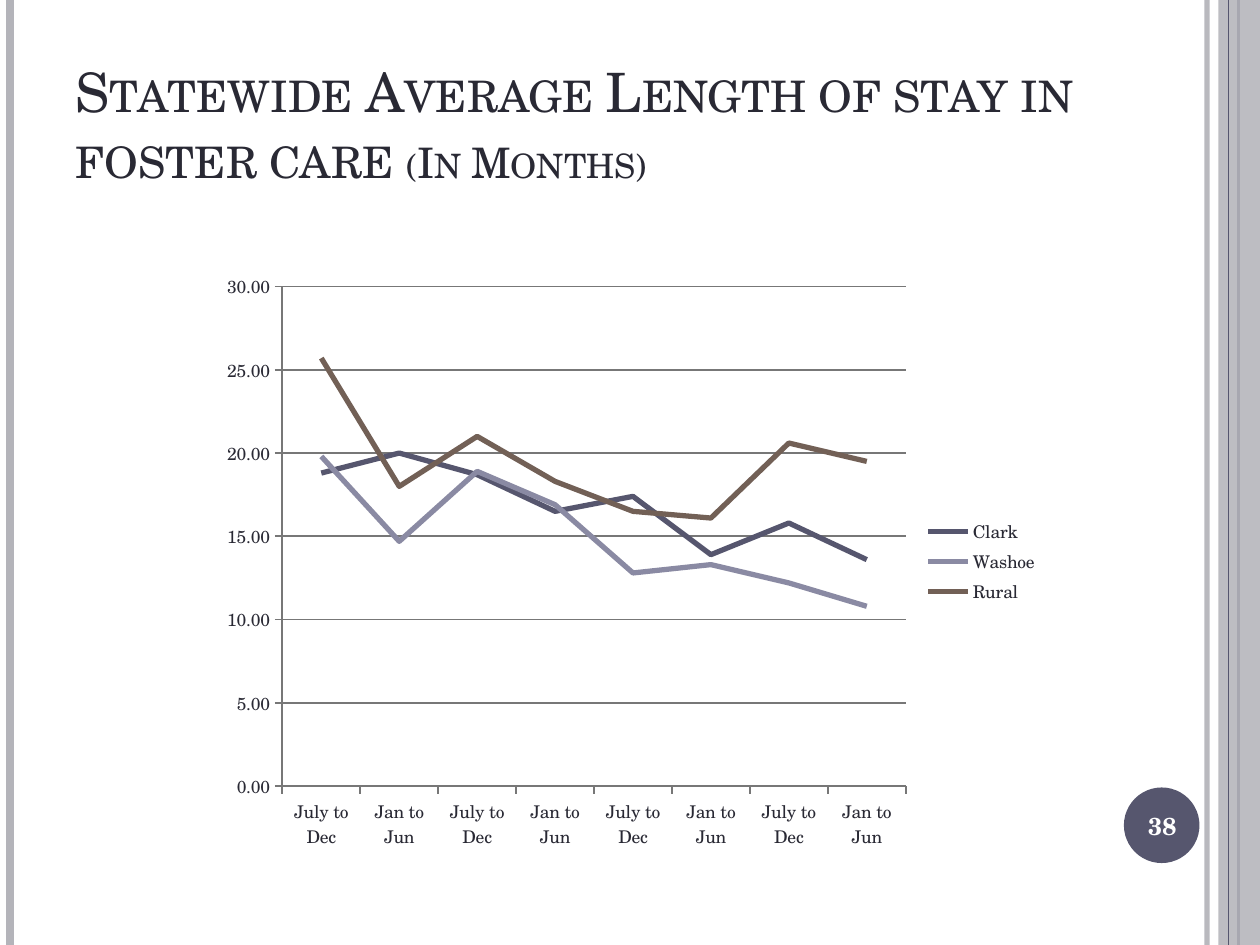
from dataclasses import dataclass

import pptx
import pptx.chart.data
import pptx.dml.color
import pptx.enum.chart
import pptx.enum.shapes
import pptx.enum.text
import pptx.oxml.ns
import pptx.oxml.xmlchemy
import pptx.util
from lxml import etree

Inches = pptx.util.Inches
Pt = pptx.util.Pt
RGBColor = pptx.dml.color.RGBColor
Shape = pptx.enum.shapes.MSO_SHAPE
Align = pptx.enum.text.PP_ALIGN
Anchor = pptx.enum.text.MSO_ANCHOR
qn = pptx.oxml.ns.qn

FONT = "TeX Gyre Schola"
INK = RGBColor(0x29, 0x29, 0x34)
SLATE = RGBColor(0x56, 0x56, 0x6E)
LILAC = RGBColor(0x8A, 0x8A, 0xA3)
BROWN = RGBColor(0x72, 0x60, 0x56)
SILVER = RGBColor(0xB4, 0xB4, 0xBA)
GRID = RGBColor(0x77, 0x77, 0x77)
WHITE = RGBColor(0xFF, 0xFF, 0xFF)


@dataclass
class Rule:
    x: float
    width: float
    color: RGBColor
    alpha: int = 100


@dataclass
class Trend:
    name: str
    values: tuple[float, ...]
    color: RGBColor


LEFT_RULES = [Rule(9.58, 3, SILVER, 93), Rule(0.08, 4.5, SILVER), Rule(9.83, 1.5, SLATE)]
TOP_RULES = [Rule(9.75, 0.75, SLATE)]
TRENDS = [
    Trend("Clark", (18.8, 20, 18.7, 16.5, 17.4, 13.9, 15.8, 13.6), SLATE),
    Trend("Washoe", (19.8, 14.7, 18.9, 16.9, 12.8, 13.3, 12.2, 10.8), LILAC),
    Trend("Rural", (25.7, 18, 21, 18.3, 16.5, 16.1, 20.6, 19.5), BROWN),
]


def fade(shape, alpha: int) -> None:
    """Set the opacity, in percent, of the shape's plain colours."""
    for color in shape._element.iter(qn("a:srgbClr")):
        etree.SubElement(color, qn("a:alpha"), val=str(alpha * 1000))


def draw_rule(slide, rule: Rule) -> None:
    x = Inches(rule.x)
    line = slide.shapes.add_connector(
        pptx.enum.shapes.MSO_CONNECTOR.STRAIGHT, x, 0, x, Inches(7.5))
    line.line.width = Pt(rule.width)
    line.line.color.rgb = rule.color
    etree.SubElement(line._element.spPr, qn("a:effectLst"))
    if rule.alpha < 100:
        fade(line, rule.alpha)


def draw_shape(slide, kind: Shape, box: tuple, color: RGBColor):
    shape = slide.shapes.add_shape(kind, *map(Inches, box))
    shape.shadow.inherit = False
    shape.fill.solid()
    shape.fill.fore_color.rgb = color
    shape.line.fill.background()
    return shape


def add_text(part, text: str, *, size: float, color: RGBColor,
             bold: bool = False, small: bool = False) -> None:
    run = part.add_run()
    run.text = text
    run.font.name = FONT
    run.font.size = Pt(size)
    run.font.color.rgb = color
    run.font.bold = bold
    if small:
        run._r.get_or_add_rPr().set("cap", "small")


def set_frame(shape, anchor: Anchor, align: Align):
    """Prepare the text frame and return its first paragraph."""
    frame = shape.text_frame
    frame.word_wrap = True
    frame.auto_size = pptx.enum.text.MSO_AUTO_SIZE.NONE
    frame.vertical_anchor = anchor
    frame.paragraphs[0].alignment = align
    return frame.paragraphs[0]


def draw_title(slide) -> None:
    title = slide.shapes.title
    title.left, title.top = Inches(0.5), Inches(0.3)
    title.width, title.height = Inches(8.17), Inches(1.25)
    part = set_frame(title, Anchor.BOTTOM, Align.LEFT)
    add_text(part, "Statewide Average Length of stay in foster care ",
             size=31, color=INK, small=True)
    add_text(part, "(In Months)", size=24, color=INK, small=True)


def draw_chart(slide) -> None:
    data = pptx.chart.data.CategoryChartData(number_format="0.00")
    data.categories = ["July to Dec", "Jan to Jun"] * 4
    for trend in TRENDS:
        data.add_series(trend.name, trend.values)
    chart = slide.shapes.add_chart(
        pptx.enum.chart.XL_CHART_TYPE.LINE,
        *map(Inches, (1.67, 2.08, 6.67, 4.75)), data).chart
    chart.font.name = FONT
    chart.font.size = Pt(10)
    chart.font.color.rgb = INK
    chart.has_title = False
    chart.has_legend = True
    chart.legend.position = pptx.enum.chart.XL_LEGEND_POSITION.RIGHT
    chart.legend.include_in_layout = False
    chart.plots[0].vary_by_categories = False

    scale = chart.value_axis
    scale.minimum_scale, scale.maximum_scale, scale.major_unit = 0, 30, 5
    scale.has_major_gridlines = True
    scale.tick_labels.number_format = "0.00"
    scale.tick_labels.number_format_is_linked = False
    for axis in (scale, chart.category_axis):
        axis.major_tick_mark = pptx.enum.chart.XL_TICK_MARK.OUTSIDE
    for item in (scale, chart.category_axis, scale.major_gridlines):
        item.format.line.color.rgb = GRID
        item.format.line.width = Pt(1)

    for series, trend in zip(chart.plots[0].series, TRENDS):
        series.smooth = False
        series.marker.style = pptx.enum.chart.XL_MARKER_STYLE.NONE
        series.format.line.color.rgb = trend.color
        series.format.line.width = Pt(3)


def main() -> None:
    deck = pptx.Presentation()
    deck.slide_width, deck.slide_height = Inches(10), Inches(7.5)
    slide = deck.slides.add_slide(deck.slide_layouts[5])
    for rule in LEFT_RULES:
        draw_rule(slide, rule)
    band = draw_shape(slide, Shape.RECTANGLE, (9.67, 0, 0.33, 7.5), SILVER)
    fade(band, 87)
    for rule in TOP_RULES:
        draw_rule(slide, rule)
    draw_shape(slide, Shape.OVAL, (8.92, 6.25, 0.6, 0.6), SLATE)
    draw_title(slide)
    draw_chart(slide)
    page = slide.shapes.add_textbox(*map(Inches, (8.89, 6.27, 0.67, 0.57)))
    part = set_frame(page, Anchor.MIDDLE, Align.CENTER)
    add_text(part, "38", size=14, color=WHITE, bold=True)
    deck.save("out.pptx")


if __name__ == "__main__":
    main()
